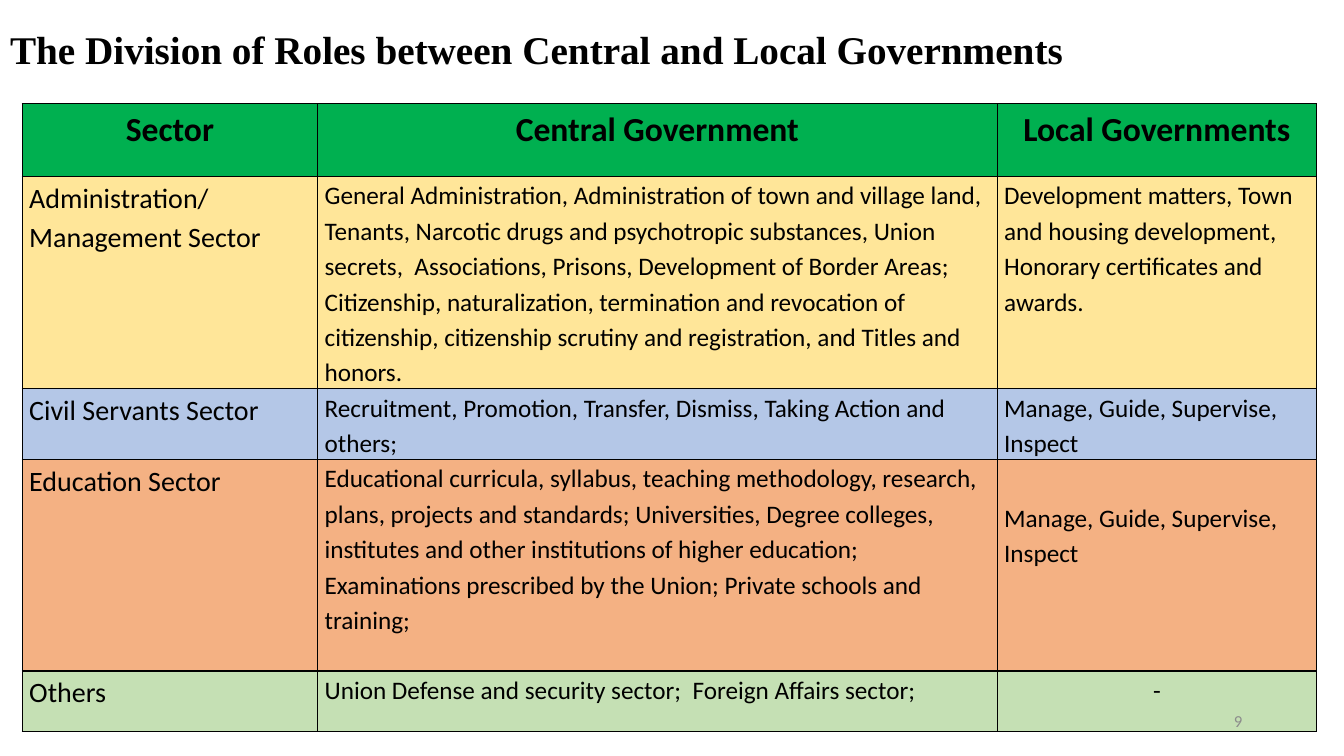
from dataclasses import dataclass

from lxml.etree import SubElement
from pptx import Presentation
from pptx.dml.color import RGBColor
from pptx.enum.text import MSO_ANCHOR as Anchor, PP_ALIGN as Align
from pptx.oxml.ns import qn
from pptx.slide import Slide
from pptx.table import _Cell as Cell
from pptx.text.text import TextFrame
from pptx.util import Inches, Length, Pt

SLIDE_WIDTH = Inches(13.33)
SLIDE_HEIGHT = Inches(7.5)


@dataclass(frozen=True)
class Theme:
    body_font: str = "Calibri"
    title_font: str = "Times New Roman"
    ink: str = "000000"
    muted: str = "8C8C8C"
    header: str = "00B050"
    title_size: int = 28
    header_size: int = 24
    sector_size: int = 20
    body_size: int = 18
    number_size: int = 12
    line_spacing: float = 1.15


@dataclass(frozen=True)
class Box:
    left: float
    top: float
    width: float
    height: float

    def lengths(self) -> tuple[Length, Length, Length, Length]:
        return across(self.left), down(self.top), across(self.width), down(self.height)


@dataclass(frozen=True)
class TextStyle:
    font: str
    size: int
    color: str
    bold: bool = False
    align: Align = Align.LEFT
    spacing: float = 1.0


@dataclass(frozen=True)
class SectorRow:
    height: float
    fill: str
    sector: str
    central: str
    local: str
    local_align: Align = Align.LEFT
    local_drop: float = 0


THEME = Theme()
TITLE_BOX = Box(-3.75, 2.67, 86.87, 7.6)
NUMBER_BOX = Box(70.67, 92.67, 22.5, 5.33)
COLUMN_SHARES = (21.98, 50.56, 23.78)
TABLE_LEFT, TABLE_TOP = 1.65, 13.73
HEADER_HEIGHT = 9.6
HEADINGS = ("Sector", "Central Government", "Local Governments")

SECTORS = (
    SectorRow(
        28, "FFE699", "Administration/ Management Sector",
        "General Administration, Administration of town and village land, Tenants, "
        "Narcotic drugs and psychotropic substances, Union secrets,  Associations, "
        "Prisons, Development of Border Areas; Citizenship, naturalization, "
        "termination and revocation of citizenship, citizenship scrutiny and "
        "registration, and Titles and honors.",
        "Development matters, Town and housing development, Honorary certificates "
        "and awards.",
    ),
    SectorRow(
        9.33, "B4C7E7", "Civil Servants Sector",
        "Recruitment, Promotion, Transfer, Dismiss, Taking Action and others;",
        "Manage, Guide, Supervise, Inspect",
    ),
    SectorRow(
        28, "F4B183", "Education Sector",
        "Educational curricula, syllabus, teaching methodology, research, plans, "
        "projects and standards; Universities, Degree colleges, institutes and other "
        "institutions of higher education; Examinations prescribed by the Union; "
        "Private schools and training;",
        "Manage, Guide, Supervise, Inspect",
        local_drop=5.2,
    ),
    SectorRow(
        8, "C5E0B4", "Others",
        "Union Defense and security sector;  Foreign Affairs sector;",
        "-", local_align=Align.CENTER,
    ),
)


def across(percent: float) -> Length:
    return Length(round(SLIDE_WIDTH * percent / 100))


def down(percent: float) -> Length:
    return Length(round(SLIDE_HEIGHT * percent / 100))


def write(frame: TextFrame, text: str, style: TextStyle) -> None:
    frame.word_wrap = True
    paragraph = frame.paragraphs[0]
    paragraph.text = text
    paragraph.alignment = style.align
    paragraph.line_spacing = style.spacing
    font = paragraph.font
    font.name, font.size, font.bold = style.font, Pt(style.size), style.bold
    font.color.rgb = RGBColor.from_string(style.color)


def add_borders(cell: Cell) -> None:
    properties = cell._tc.get_or_add_tcPr()
    for side in ("a:lnL", "a:lnR", "a:lnT", "a:lnB"):
        line = SubElement(properties, qn(side), w=str(Pt(1)))
        fill = SubElement(line, qn("a:solidFill"))
        SubElement(fill, qn("a:srgbClr"), val=THEME.ink)


def fill_cell(cell: Cell, text: str, fill: str, style: TextStyle, drop: float = 0) -> None:
    add_borders(cell)
    cell.fill.solid()
    cell.fill.fore_color.rgb = RGBColor.from_string(fill)
    cell.margin_left = cell.margin_right = Inches(0.07)
    cell.margin_top, cell.margin_bottom = down(drop), 0
    cell.vertical_anchor = Anchor.TOP
    write(cell.text_frame, text, style)


def body_style(size: int, align: Align = Align.LEFT, bold: bool = False) -> TextStyle:
    return TextStyle(THEME.body_font, size, THEME.ink, bold, align, THEME.line_spacing)


def add_title(slide: Slide) -> None:
    title = slide.shapes.title
    title.left, title.top, title.width, title.height = TITLE_BOX.lengths()
    frame = title.text_frame
    frame.margin_left = Inches(0.6)
    frame.vertical_anchor = Anchor.MIDDLE
    write(frame, "The Division of Roles between Central and Local Governments",
          TextStyle(THEME.title_font, THEME.title_size, THEME.ink, bold=True))


def add_roles_table(slide: Slide) -> None:
    heights = (HEADER_HEIGHT, *(row.height for row in SECTORS))
    box = Box(TABLE_LEFT, TABLE_TOP, sum(COLUMN_SHARES), sum(heights))
    table = slide.shapes.add_table(len(heights), len(COLUMN_SHARES), *box.lengths()).table
    table.horz_banding = False
    table.first_row = False
    for column, share in zip(table.columns, COLUMN_SHARES):
        column.width = across(share)
    for row, height in zip(table.rows, heights):
        row.height = down(height)

    header_style = body_style(THEME.header_size, Align.CENTER, bold=True)
    for cell, heading in zip(table.rows[0].cells, HEADINGS):
        fill_cell(cell, heading, THEME.header, header_style)
    for index, row in enumerate(SECTORS, start=1):
        sector, central, local = table.rows[index].cells
        fill_cell(sector, row.sector, row.fill, body_style(THEME.sector_size, Align.JUSTIFY))
        fill_cell(central, row.central, row.fill, body_style(THEME.body_size))
        fill_cell(local, row.local, row.fill,
                  body_style(THEME.body_size, row.local_align), row.local_drop)


def add_slide_number(slide: Slide) -> None:
    frame = slide.shapes.add_textbox(*NUMBER_BOX.lengths()).text_frame
    frame.vertical_anchor = Anchor.MIDDLE
    write(frame, "9", TextStyle(THEME.body_font, THEME.number_size, THEME.muted,
                                align=Align.RIGHT))


def main() -> None:
    presentation = Presentation()
    presentation.slide_width = SLIDE_WIDTH
    presentation.slide_height = SLIDE_HEIGHT
    title_only = presentation.slide_layouts.get_by_name("Title Only")
    slide = presentation.slides.add_slide(title_only)
    add_title(slide)
    add_roles_table(slide)
    add_slide_number(slide)
    presentation.save("out.pptx")


if __name__ == "__main__":
    main()
